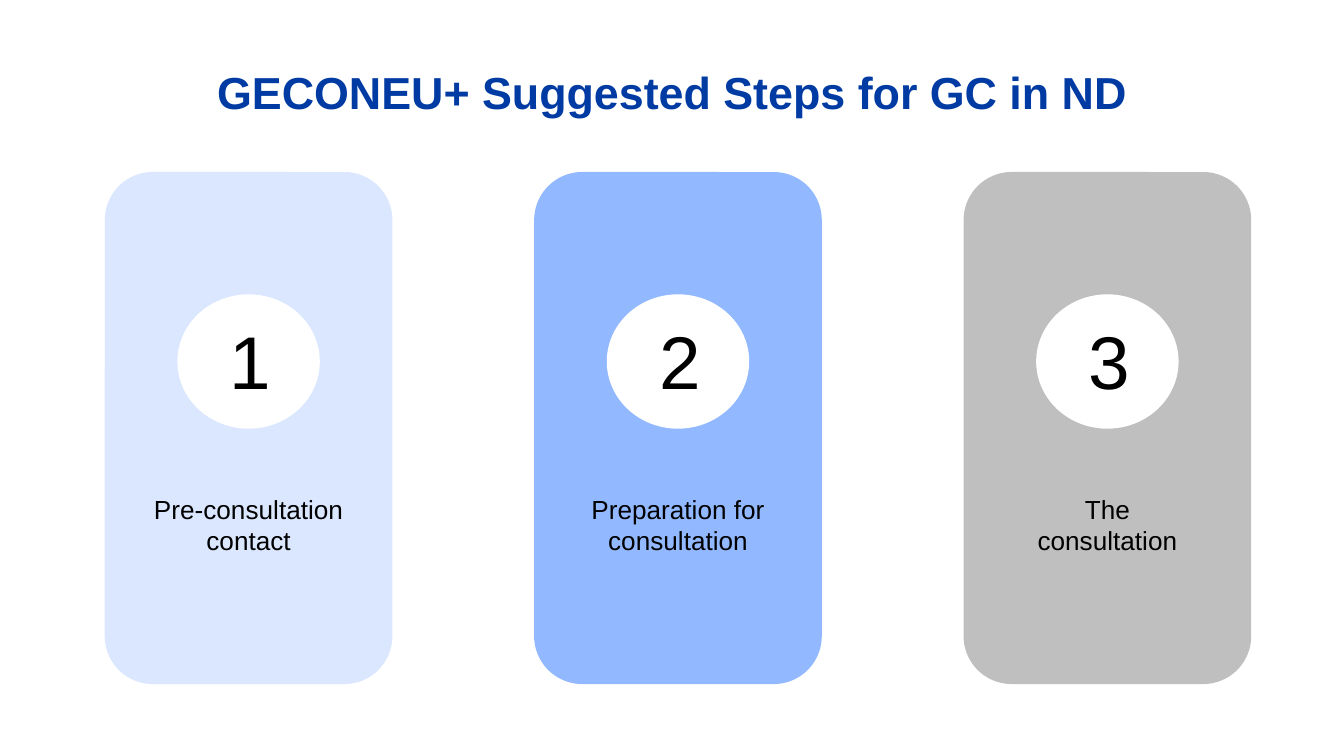
"""Build the slide with the three suggested steps for genetic counselling."""
from pptx import Presentation
from pptx.dml.color import RGBColor
from pptx.enum.shapes import MSO_SHAPE as Shape
from pptx.enum.text import MSO_ANCHOR as Anchor, MSO_AUTO_SIZE as AutoSize, PP_ALIGN as Align
from pptx.util import Inches, Pt

COLORS = {
    "title": "003BA3",
    "text": "000000",
    "badge": "FFFFFF",
    "contact": "DAE7FF",
    "preparation": "92B9FF",
    "consultation": "BFBFBF",
}
STEPS = [
    ("Pre-consultation contact", "contact"),
    ("Preparation for consultation", "preparation"),
    ("The consultation", "consultation"),
]
SLIDE_WIDTH = 10
SLIDE_HEIGHT = SLIDE_WIDTH * 9 / 16
FIRST_LEFT, LAST_LEFT = 0.78, 7.17
STEP_PITCH = (LAST_LEFT - FIRST_LEFT) / (len(STEPS) - 1)


def write(frame, text, size, color="text", bold=False, align=Align.CENTER,
          inset=0.05, fit=AutoSize.NONE):
    frame.word_wrap = True
    frame.auto_size = fit
    frame.vertical_anchor = Anchor.TOP
    frame.margin_left = frame.margin_right = Inches(0.1)
    frame.margin_top = frame.margin_bottom = Inches(inset)
    paragraph = frame.paragraphs[0]
    paragraph.alignment = align
    run = paragraph.add_run()
    run.text = text
    run.font.name = "Arial"
    run.font.size = Pt(size)
    run.font.bold = bold
    run.font.color.rgb = RGBColor.from_string(COLORS[color])


class StepSlide:
    def __init__(self, deck):
        self.slide = deck.slides.add_slide(deck.slide_layouts[5])

    def title(self, text):
        heading = self.slide.shapes.title
        heading.left, heading.top = Inches(0.78), Inches(0.38)
        heading.width, heading.height = Inches(8.44), Inches(0.63)
        write(heading.text_frame, text, 24, "title", bold=True, inset=0.1)

    def filled(self, group, preset, box, color):
        shape = group.shapes.add_shape(preset, *map(Inches, box))
        shape.shadow.inherit = False
        shape.fill.solid()
        shape.fill.fore_color.rgb = RGBColor.from_string(COLORS[color])
        shape.line.fill.background()
        return shape

    def label(self, group, text, box, size, align):
        caption = group.shapes.add_textbox(*map(Inches, box))
        write(caption.text_frame, text, size, align=align, fit=AutoSize.SHAPE_TO_FIT_TEXT)

    def step(self, number, name, color, left):
        group = self.slide.shapes.add_group_shape()
        card = self.filled(group, Shape.ROUNDED_RECTANGLE, (left, 1.28, 2.14, 3.81), color)
        card.adjustments[0] = 0.167
        self.filled(group, Shape.FLOWCHART_CONNECTOR, (left + 0.54, 2.19, 1.06, 1), "badge")
        self.label(group, str(number), (left + 0.83, 2.29, 0.48, 0.77), 40, Align.LEFT)
        self.label(group, name, (left + 0.26, 3.62, 1.62, 0.57), 14, Align.CENTER)


def main():
    deck = Presentation()
    deck.slide_width, deck.slide_height = Inches(SLIDE_WIDTH), Inches(SLIDE_HEIGHT)
    page = StepSlide(deck)
    page.title("GECONEU+ Suggested Steps for GC in ND")
    for index, (name, color) in enumerate(STEPS):
        page.step(index + 1, name, color, FIRST_LEFT + index * STEP_PITCH)
    deck.save("out.pptx")


if __name__ == "__main__":
    main()
